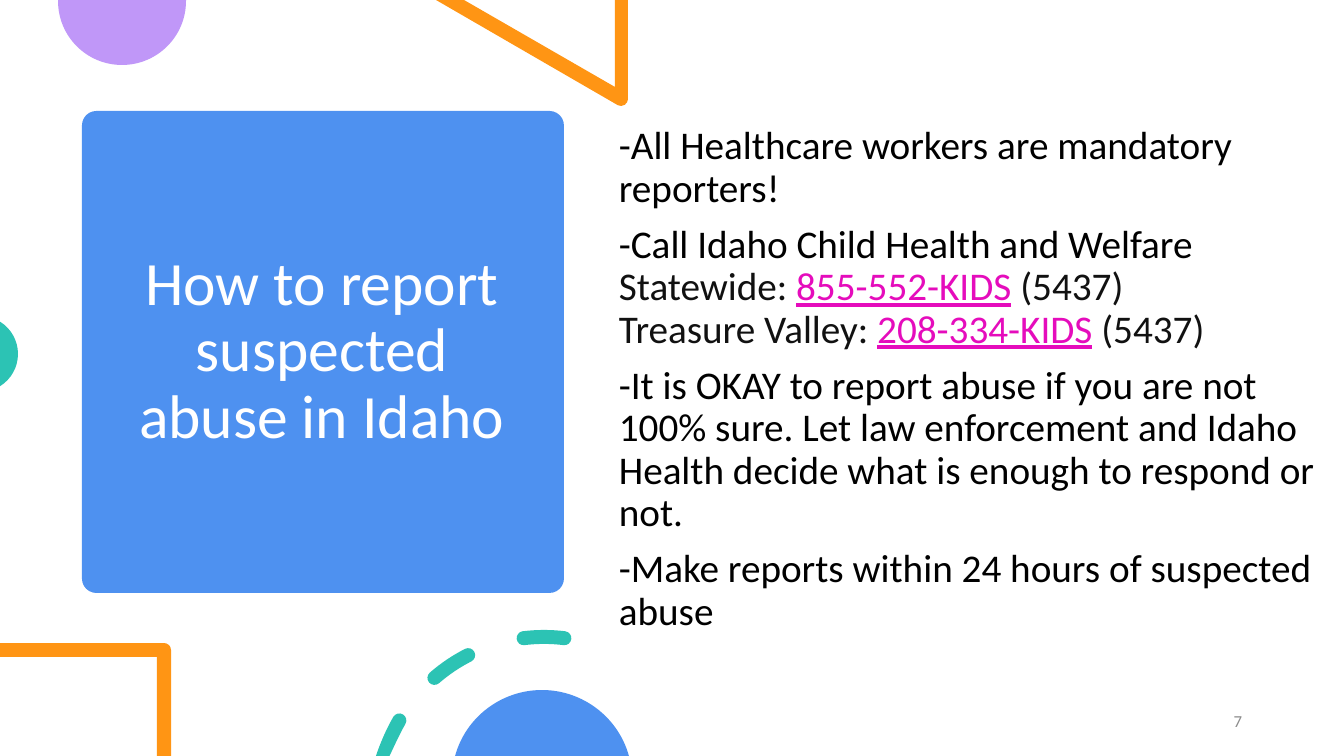
"""Build the slide on reporting suspected abuse in Idaho."""
import math

import lxml.etree
import pptx
import pptx.dml.color
import pptx.enum.shapes
import pptx.enum.text
import pptx.oxml.ns
import pptx.util

RGB = pptx.dml.color.RGBColor
ALIGN = pptx.enum.text.PP_ALIGN
MIDDLE = pptx.enum.text.MSO_ANCHOR.MIDDLE
WHITE = RGB(0xFF, 0xFF, 0xFF)
BLACK = RGB(0x00, 0x00, 0x00)
DARK = RGB(0x11, 0x11, 0x11)
GRAY = RGB(0x8C, 0x8C, 0x8C)
BLUE = RGB(0x4E, 0x91, 0xF0)
PURPLE = RGB(0xC0, 0x97, 0xF8)
ORANGE = RGB(0xFF, 0x95, 0x14)
TEAL = RGB(0x2C, 0xC3, 0xB4)
PINK = RGB(0xE5, 0x0C, 0xBC)

WIDE, HIGH = 1344, 756
SCALE = 914400 / 100.8
FINE = 100
FACE = "Calibri"
PLAIN = {"color": BLACK}
NOTE = {"color": DARK}
LINK = {"color": PINK, "underline": True}
BODY = [
    [("-All Healthcare workers are mandatory reporters!", PLAIN)],
    [("-Call Idaho Child Health and Welfare ", PLAIN),
     ("Statewide: ", NOTE), ("855-552-KIDS", LINK), (" (5437)", NOTE),
     None,
     ("Treasure Valley: ", NOTE), ("208-334-KIDS", LINK), (" (5437)", NOTE)],
    [("-It is OKAY to report abuse if you are not 100% sure. Let law "
      "enforcement and Idaho Health decide what is enough to respond or not.",
      PLAIN)],
    [("-Make reports within 24 hours of suspected abuse", PLAIN)],
]


def px(num):
    """Turn pixels into EMU."""
    return pptx.util.Emu(round(num * SCALE))


def spot(x, y, size, angle, lean=0):
    """Find a point on a circle, moved along its tangent by a lean."""
    turn = math.radians(angle)
    return (x + size * (math.cos(turn) - lean * math.sin(turn)),
            y + size * (math.sin(turn) + lean * math.cos(turn)))


def arc(x, y, size, start, end):
    """List a first point and then the curves of a circular arc."""
    count = math.ceil(abs(end - start) / 90)
    step = (end - start) / count
    lean = 4 / 3 * math.tan(math.radians(step / 4))
    curves = [spot(x, y, size, start)]
    for i in range(count):
        turn = start + i * step
        curves.append((spot(x, y, size, turn, lean),
                       spot(x, y, size, turn + step, -lean),
                       spot(x, y, size, turn + step)))
    return curves


def dash(x, y, size, half, start, end, cap):
    """List the outline of a curved dash, round at its end and its cap."""
    loop = (arc(x, y, size + half, start, end)
            + arc(*spot(x, y, size, end), half, end, end + 180)[1:]
            + arc(x, y, size - half, end, start)[1:])
    if cap:
        tip = spot(x, y, size, start)
        loop += arc(*tip, half, start + 180, start + 360)[1:]
    return loop


def paint(shape, color):
    """Fill a shape and clear its line and shadow."""
    shape.shadow.inherit = False
    shape.fill.solid()
    shape.fill.fore_color.rgb = color
    shape.line.fill.background()


def bend(shape, loops):
    """Join the line steps of each curve into one cubic step."""
    name = pptx.oxml.ns.qn
    lines = iter(list(shape.element.iter(name("a:lnTo"))))
    for part in (part for loop in loops for part in loop[1:]):
        line = next(lines)
        if isinstance(part[0], tuple):
            cubic = lxml.etree.Element(name("a:cubicBezTo"))
            line.addprevious(cubic)
            for step in (line, next(lines), next(lines)):
                cubic.append(step[0])
                step.getparent().remove(step)


def draw(slide, color, *loops):
    """Draw closed outlines of points and curves as one filled shape."""
    def fit(spots):
        return [(x * FINE, min(y, HIGH) * FINE) for x, y in spots]

    pen = None
    for loop in loops:
        first = fit(loop[:1])[0]
        if pen is None:
            pen = slide.shapes.build_freeform(*first, scale=SCALE / FINE)
        else:
            pen.move_to(*first)
        spots = []
        for part in loop[1:]:
            spots += part if isinstance(part[0], tuple) else [part]
        pen.add_line_segments(fit(spots), close=True)
    shape = pen.convert_to_shape()
    bend(shape, loops)
    paint(shape, color)


def place(shape, left, top, width, height):
    """Set the place and size of a shape."""
    shape.left, shape.top = px(left), px(top)
    shape.width, shape.height = px(width), px(height)


def write(shape, paras, size, form, anchor=None):
    """Write paragraphs made of styled runs, with None as a line break."""
    frame = shape.text_frame
    frame.word_wrap = True
    frame.auto_size = pptx.enum.text.MSO_AUTO_SIZE.NONE
    frame.vertical_anchor = anchor
    for i, parts in enumerate(paras):
        para = frame.add_paragraph() if i else frame.paragraphs[0]
        for key, value in form.items():
            setattr(para, key, value)
        for part in parts:
            if part is None:
                para.add_line_break()
                continue
            run = para.add_run()
            run.text, style = part
            font = {"name": FACE, "size": pptx.util.Pt(size), **style}
            run.font.color.rgb = font.pop("color")
            for key, value in font.items():
                setattr(run.font, key, value)


def head(slide):
    """Set the title on its blue card."""
    card = slide.shapes.add_shape(
        pptx.enum.shapes.MSO_SHAPE.ROUNDED_RECTANGLE,
        px(82), px(111), px(482), px(482))
    card.adjustments[0] = 0.03
    paint(card, BLUE)
    title = slide.shapes.title
    title.element.addprevious(card.element)
    place(title, 105, 122, 434, 460)
    write(title, [[("How to report suspected abuse in Idaho",
                    {"color": WHITE})]], 44,
          {"alignment": ALIGN.CENTER, "line_spacing": 0.9}, MIDDLE)


def decor(slide):
    """Draw the coloured shapes along the slide's edges."""
    draw(slide, PURPLE, [(186, 0), (58, 0), *arc(122, 1, 64, 180, 0)])
    draw(slide, ORANGE, [(628, 0), (615, 0), (615, 87), (464, 0), (436, 0),
                         *arc(621, 99, 7, 115, 0)])
    draw(slide, TEAL, arc(-20, 354, 38, -58, 58))
    draw(slide, ORANGE, [*arc(164, 650, 7, 0, -90), (0, 643), (0, 657),
                         (157, 657), (157, HIGH), (171, HIGH)])
    spans = [(195, 210, False), (229, 243, True), (263, 277, True)]
    draw(slide, TEAL, *[dash(544, 804, 167, 7, *span) for span in spans])
    draw(slide, BLUE, arc(542, 780, 90, 195, 345))


def main():
    """Build and save the slide."""
    deck = pptx.Presentation()
    deck.slide_width, deck.slide_height = px(WIDE), px(HIGH)
    slide = deck.slides.add_slide(deck.slide_layouts[5])
    head(slide)
    decor(slide)
    body = slide.shapes.add_textbox(px(609), px(121), px(733), px(539))
    write(body, BODY, 28,
          {"line_spacing": 0.9, "space_before": pptx.util.Pt(10)})
    page = slide.shapes.add_textbox(px(1158), px(701), px(94), px(40))
    write(page, [[("7", {"color": GRAY})]], 12,
          {"alignment": ALIGN.RIGHT, "space_after": pptx.util.Pt(6)}, MIDDLE)
    deck.save("out.pptx")


if __name__ == "__main__":
    main()
